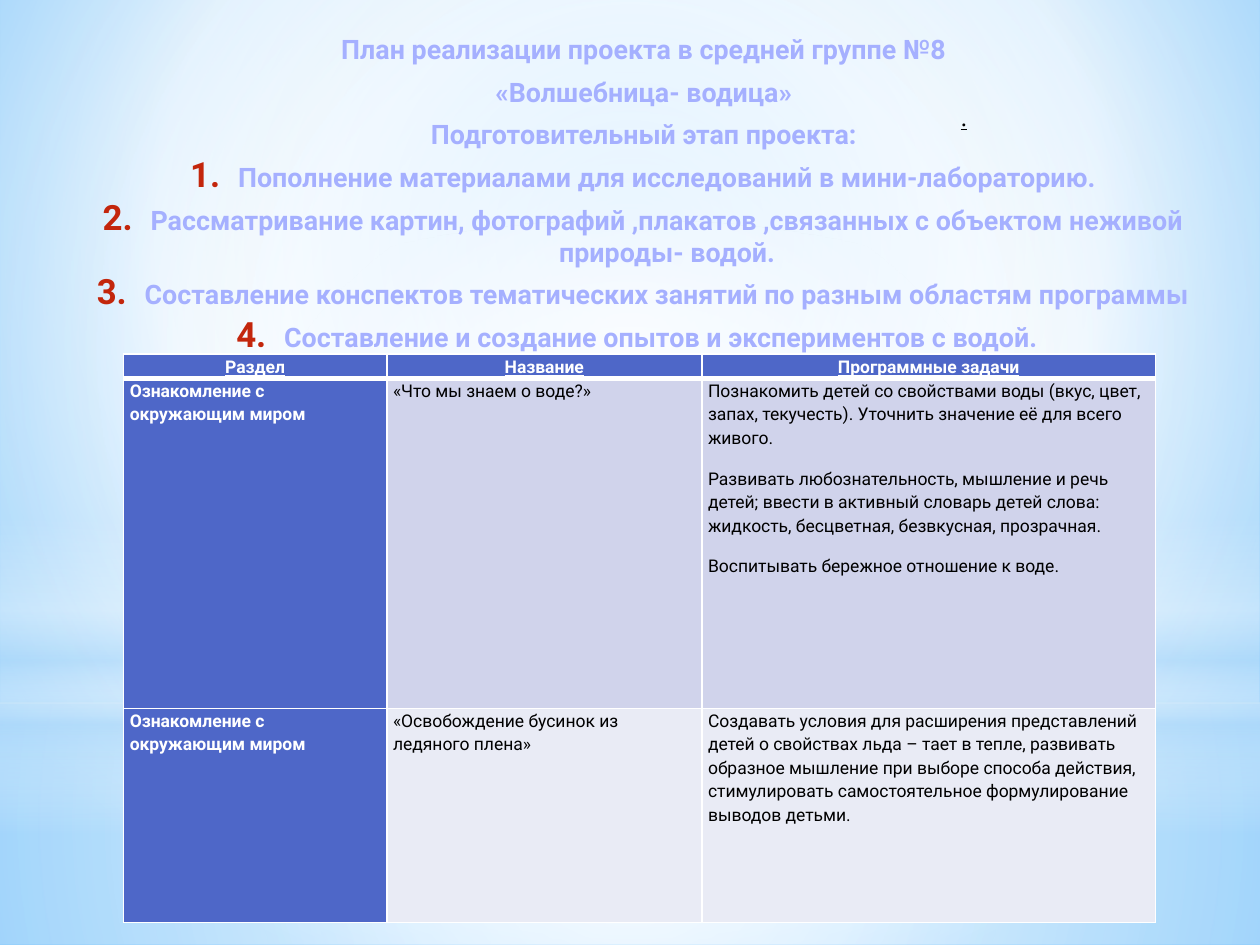
from pptx import Presentation
from pptx.dml.color import RGBColor
from pptx.enum.shapes import MSO_SHAPE
from pptx.enum.text import MSO_ANCHOR, PP_ALIGN
from pptx.oxml import parse_xml
from pptx.oxml.ns import nsdecls, qn
from pptx.util import Inches, Pt

WHITE = RGBColor(0xFF, 0xFF, 0xFF)
BLACK = RGBColor(0x00, 0x00, 0x00)
SKY = RGBColor(0x9E, 0xD5, 0xFF)
DEEP_SKY = RGBColor(0x5B, 0xB9, 0xFF)
HAZE = RGBColor(0xB4, 0xDC, 0xFA)
LILAC = RGBColor(0xA5, 0xB0, 0xFF)
PALE_LILAC = RGBColor(0xBC, 0xC4, 0xFF)
NAVY = RGBColor(0x00, 0x1C, 0x8A)
RED = RGBColor(0xC3, 0x26, 0x0C)
TABLE_BLUE = RGBColor(0x4E, 0x67, 0xC8)
BANDS = [RGBColor(0xD0, 0xD3, 0xEB), RGBColor(0xE9, 0xEB, 0xF5)]
FONT = "Roboto"
CENTRE = (50, 50, 50, 50)

HEADINGS = [
    "План реализации проекта в средней группе №8",
    "«Волшебница- водица»",
    "Подготовительный этап проекта:",
]
STEPS = [
    "Пополнение материалами для исследований в мини-лабораторию.",
    "Рассматривание картин, фотографий ,плакатов ,связанных с объектом неживой природы- водой.",
    "Составление конспектов тематических занятий по разным областям программы",
    "Составление и создание опытов и экспериментов с водой.\t",
]
HEADER = ["Раздел", "Название", "Программные задачи"]
SECTION = "Ознакомление с окружающим миром"
LESSONS = [
    [[SECTION], ["«Что мы знаем о воде?»"], [
        "Познакомить детей со свойствами воды (вкус, цвет, запах, текучесть). "
        "Уточнить значение её для всего живого.",
        "Развивать любознательность, мышление и речь детей; ввести в активный словарь "
        "детей слова: жидкость, бесцветная, безвкусная, прозрачная.",
        "Воспитывать бережное отношение к воде.",
    ]],
    [[SECTION], ["«Освобождение бусинок из ледяного плена»"], [
        "Создавать условия для расширения представлений детей о свойствах льда – тает в "
        "тепле, развивать образное мышление при выборе способа действия, стимулировать "
        "самостоятельное формулирование выводов детьми.",
    ]],
]


def gradient(stops, focus=None):
    """Gradient from (position, colour, opacity) in percent; vertical without a focus."""
    marks = "".join(
        f'<a:gs pos="{position * 1000}"><a:srgbClr val="{colour}">'
        f'<a:alpha val="{opacity * 1000}"/></a:srgbClr></a:gs>'
        for position, colour, opacity in stops)
    if focus:
        left, top, right, bottom = (share * 1000 for share in focus)
        course = (f'<a:path path="circle"><a:fillToRect l="{left}" t="{top}" '
                  f'r="{right}" b="{bottom}"/></a:path>')
    else:
        course = '<a:lin ang="5400000" scaled="0"/>'
    return parse_xml(f'<a:gradFill {nsdecls("a")} rotWithShape="1">'
                     f'<a:gsLst>{marks}</a:gsLst>{course}</a:gradFill>')


def replace_solid(parent, fill):
    solid = parent.find(qn("a:solidFill"))
    parent.replace(solid, fill)


def add_glow(slide, kind, box, stops, focus=None):
    shape = slide.shapes.add_shape(kind, *map(Inches, box))
    shape.shadow.inherit = False
    shape.fill.solid()
    replace_solid(shape.element.spPr, gradient(stops, focus))
    shape.line.fill.background()


def add_backdrop(slide, width, height):
    slide.background.fill.solid()
    properties = slide.element.find(".//" + qn("p:bgPr"))
    replace_solid(properties, gradient(
        [(0, SKY, 100), (60, WHITE, 100), (100, DEEP_SKY, 100)], (20, 10, 20, 60)))
    horizon = 5.58
    rectangle = MSO_SHAPE.RECTANGLE
    add_glow(slide, rectangle, (0, horizon, width, height - horizon),
             [(0, WHITE, 91), (37, WHITE, 76), (100, HAZE, 79)], CENTRE)
    add_glow(slide, rectangle, (0, 0, width, horizon),
             [(0, WHITE, 89), (48, WHITE, 62), (100, HAZE, 79)], CENTRE)
    add_glow(slide, rectangle, (0, 4.12, width, 2.5),
             [(0, WHITE, 0), (29, WHITE, 30), (45, HAZE, 40),
              (55, WHITE, 26), (65, HAZE, 60), (100, WHITE, 0)])
    add_glow(slide, MSO_SHAPE.OVAL, (0, 1.75, width, horizon),
             [(0, WHITE, 100), (56, WHITE, 0)], CENTRE)


def add_run(paragraph, text, size, colour, bold=False, underline=False, font=FONT):
    run = paragraph.add_run()
    run.text = text
    run.font.name = font
    run.font.size = Pt(size)
    run.font.bold = bold
    run.font.underline = underline
    run.font.color.rgb = colour
    return run


def next_paragraph(frame, index):
    return frame.paragraphs[0] if index == 0 else frame.add_paragraph()


def number_paragraph(properties):
    for markup in (f'<a:buClr {nsdecls("a")}><a:srgbClr val="{RED}"/></a:buClr>',
                   f'<a:buSzPct {nsdecls("a")} val="130000"/>',
                   f'<a:buFont {nsdecls("a")} typeface="+mj-lt"/>',
                   f'<a:buAutoNum {nsdecls("a")} type="arabicPeriod"/>'):
        properties.append(parse_xml(markup))


def add_plan(slide, box):
    frame = slide.shapes.add_textbox(*map(Inches, box)).text_frame
    frame.word_wrap = True
    for index, text in enumerate(HEADINGS + STEPS):
        numbered = index >= len(HEADINGS)
        paragraph = next_paragraph(frame, index)
        paragraph.alignment = PP_ALIGN.CENTER
        paragraph.space_before = paragraph.space_after = Pt(3)
        properties = paragraph._p.get_or_add_pPr()
        properties.set("marL", str(Inches(0.42 if numbered else 0.05)))
        properties.set("indent", str(Inches(-0.38 if numbered else 0)))
        if numbered:
            number_paragraph(properties)
        run = add_run(paragraph, text, 15.3, LILAC, bold=True)
        replace_solid(run.font._element, gradient(
            [(0, PALE_LILAC, 100), (9, LILAC, 100), (50, NAVY, 100),
             (79, LILAC, 100), (100, PALE_LILAC, 100)]))


def set_borders(cell, top, bottom):
    properties = cell._tc.get_or_add_tcPr()
    widths = {"lnL": 1, "lnR": 1, "lnT": top, "lnB": bottom}
    for position, (side, width) in enumerate(widths.items()):
        properties.insert(position, parse_xml(
            f'<a:{side} {nsdecls("a")} w="{Pt(width)}"><a:solidFill>'
            f'<a:srgbClr val="{WHITE}"/></a:solidFill></a:{side}>'))


def add_lessons(slide, box, column_widths, row_heights):
    rows = [[[title] for title in HEADER]] + LESSONS
    table = slide.shapes.add_table(len(rows), len(HEADER), *map(Inches, box)).table
    for column, width in zip(table.columns, column_widths):
        column.width = Inches(width)
    for row, height in zip(table.rows, row_heights):
        row.height = Inches(height)
    for row_index, row in enumerate(rows):
        for column_index, texts in enumerate(row):
            is_header = row_index == 0
            strong = is_header or column_index == 0
            cell = table.cell(row_index, column_index)
            cell.margin_left = cell.margin_right = Inches(0.05)
            cell.margin_top = cell.margin_bottom = 0
            cell.fill.solid()
            cell.fill.fore_color.rgb = TABLE_BLUE if strong else BANDS[row_index - 1]
            set_borders(cell, 3 if row_index == 1 else 1, 3 if is_header else 1)
            for index, text in enumerate(texts):
                paragraph = next_paragraph(cell.text_frame, index)
                paragraph.alignment = PP_ALIGN.CENTER if is_header else PP_ALIGN.LEFT
                paragraph.line_spacing = 1.15
                paragraph.space_after = Pt(10)
                add_run(paragraph, text, 10, WHITE if strong else BLACK,
                        bold=strong, underline=is_header)


def add_dot(slide, box):
    frame = slide.shapes.add_textbox(*map(Inches, box)).text_frame
    frame.word_wrap = True
    frame.vertical_anchor = MSO_ANCHOR.MIDDLE
    paragraph = frame.paragraphs[0]
    paragraph.alignment = PP_ALIGN.CENTER
    add_run(paragraph, ".", 14, BLACK, underline=True, font="Times New Roman")


def main():
    width, height = 10, 7.5
    presentation = Presentation()
    presentation.slide_width = Inches(width)
    presentation.slide_height = Inches(height)
    slide = presentation.slides.add_slide(presentation.slide_layouts[6])
    add_backdrop(slide, width, height)
    add_plan(slide, (0.28, 0.21, 9.61, 2.71))
    add_lessons(slide, (0.98, 2.81, 8.19, 4.49), (2.09, 2.5, 3.6), (0.17, 2.62, 1.7))
    add_dot(slide, (2.9, 0.76, 9.5, 0.34))
    presentation.save("out.pptx")


if __name__ == "__main__":
    main()
